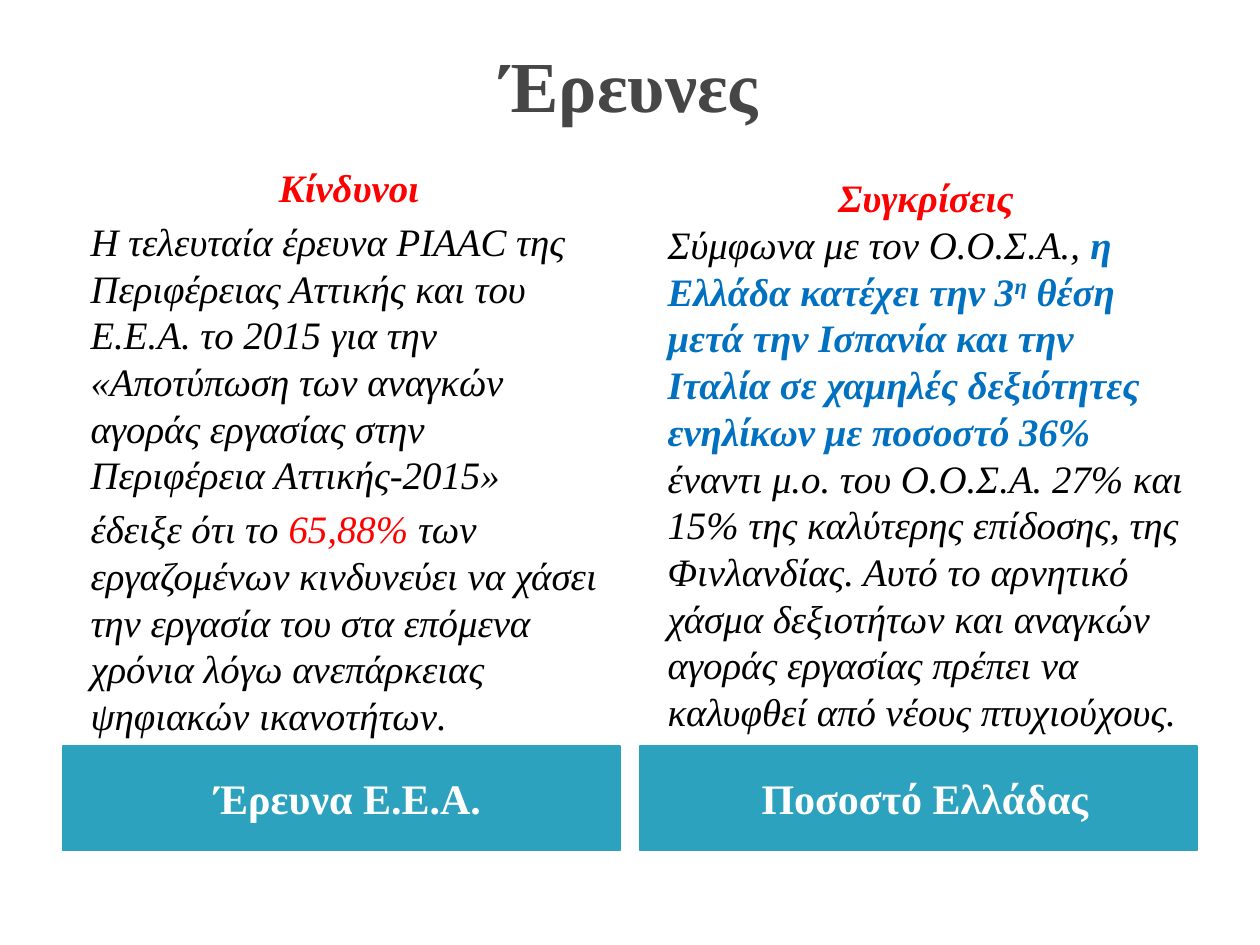
"""Build the survey slide with two text columns and their captions."""
import pptx
import pptx.dml.color
import pptx.enum.shapes
import pptx.enum.text
import pptx.util
from pptx.util import Inches

BLACK, RED, BLUE, TEAL = "000000", "FF0000", "0070C0", "2DA2BF"
CENTER = pptx.enum.text.PP_ALIGN.CENTER
LEFT = pptx.enum.text.PP_ALIGN.LEFT


def color(hex_value):
    return pptx.dml.color.RGBColor.from_string(hex_value)


class SlideBuilder:
    font_name = "Times New Roman"
    title_size = 41
    caption_size = 24
    body_size = 22.2
    body_line = 26.7

    def __init__(self, presentation):
        self.slide = presentation.slides.add_slide(presentation.slide_layouts[5])

    def format_run(self, run, size, hex_value, bold=False, italic=False):
        run.font.name = self.font_name
        run.font.size = pptx.util.Pt(size)
        run.font.color.rgb = color(hex_value)
        run.font.bold = bold
        run.font.italic = italic

    def set_line(self, frame, text, size, hex_value):
        frame.text = text
        frame.word_wrap = True
        frame.vertical_anchor = pptx.enum.text.MSO_ANCHOR.MIDDLE
        paragraph = frame.paragraphs[0]
        paragraph.alignment = CENTER
        self.format_run(paragraph.runs[0], size, hex_value, bold=True)

    def title(self, text, left, top, width, height):
        shape = self.slide.shapes.title
        shape.left, shape.top = Inches(left), Inches(top)
        shape.width, shape.height = Inches(width), Inches(height)
        self.set_line(shape.text_frame, text, self.title_size, "464646")

    def caption(self, text, left, top, width, height):
        shape = self.slide.shapes.add_shape(
            pptx.enum.shapes.MSO_SHAPE.RECTANGLE,
            Inches(left), Inches(top), Inches(width), Inches(height))
        shape.shadow.inherit = False
        shape.fill.solid()
        shape.fill.fore_color.rgb = color(TEAL)
        shape.line.color.rgb = color(TEAL)
        shape.line.width = pptx.util.Pt(0.75)
        shape.text_frame.margin_left = Inches(0.2)
        self.set_line(shape.text_frame, text, self.caption_size, "FFFFFF")

    def column(self, heading, paragraphs, left, top, width, height, gap):
        shape = self.slide.shapes.add_textbox(
            Inches(left), Inches(top), Inches(width), Inches(height))
        frame = shape.text_frame
        frame.word_wrap = True
        for index, parts in enumerate([[(heading, RED, True)]] + paragraphs):
            paragraph = frame.paragraphs[0] if index == 0 else frame.add_paragraph()
            paragraph.alignment = LEFT if index else CENTER
            paragraph.line_spacing = pptx.util.Pt(self.body_line)
            paragraph.space_before = pptx.util.Pt(gap if index else 0)
            paragraph._p.get_or_add_pPr().set("marL", str(Inches(0.12)))
            for text, hex_value, bold, *baseline in parts:
                run = paragraph.add_run()
                run.text = text
                self.format_run(run, self.body_size, hex_value, bold, italic=True)
                if baseline:
                    run._r.get_or_add_rPr().set("baseline", str(baseline[0]))


def main():
    presentation = pptx.Presentation()
    presentation.slide_width = Inches(10)
    presentation.slide_height = Inches(7.5)
    builder = SlideBuilder(presentation)
    left_edges, width = (0.5, 5.08), 4.42

    builder.title("Έρευνες", 0.5, 0, 9, 1.33)
    for left, text in zip(left_edges, ("Έρευνα Ε.Ε.Α.", "Ποσοστό Ελλάδας")):
        builder.caption(text, left, 5.92, width, 0.83)

    risks = [
        [("Η τελευταία έρευνα PIAAC της Περιφέρειας Αττικής και του Ε.Ε.Α. "
          "το 2015 για την «Αποτύπωση των αναγκών αγοράς εργασίας στην "
          "Περιφέρεια Αττικής-2015»", BLACK, False)],
        [("έδειξε ότι το ", BLACK, False),
         ("65,88% ", RED, False),
         ("των εργαζομένων κινδυνεύει να χάσει την εργασία του στα επόμενα "
          "χρόνια λόγω ανεπάρκειας ψηφιακών ικανοτήτων.", BLACK, False)],
    ]
    comparisons = [
        [("Σύμφωνα με τον Ο.Ο.Σ.Α., ", BLACK, False),
         ("η Ελλάδα κατέχει την 3", BLUE, True),
         ("η", BLUE, True, 30000),
         (" θέση μετά την Ισπανία και την Ιταλία σε χαμηλές δεξιότητες "
          "ενηλίκων με ποσοστό 36% ", BLUE, True),
         ("έναντι μ.ο. του Ο.Ο.Σ.Α. 27% και 15% της καλύτερης επίδοσης, της "
          "Φινλανδίας. Αυτό το αρνητικό χάσμα δεξιοτήτων και αναγκών αγοράς "
          "εργασίας πρέπει να καλυφθεί από νέους πτυχιούχους.", BLACK, False)],
    ]
    builder.column("Κίνδυνοι", risks, left_edges[0], 1.25, width, 4.64, gap=4)
    builder.column("Συγκρίσεις", comparisons, left_edges[1], 1.33, width, 4.56, gap=0)
    presentation.save("out.pptx")


if __name__ == "__main__":
    main()
